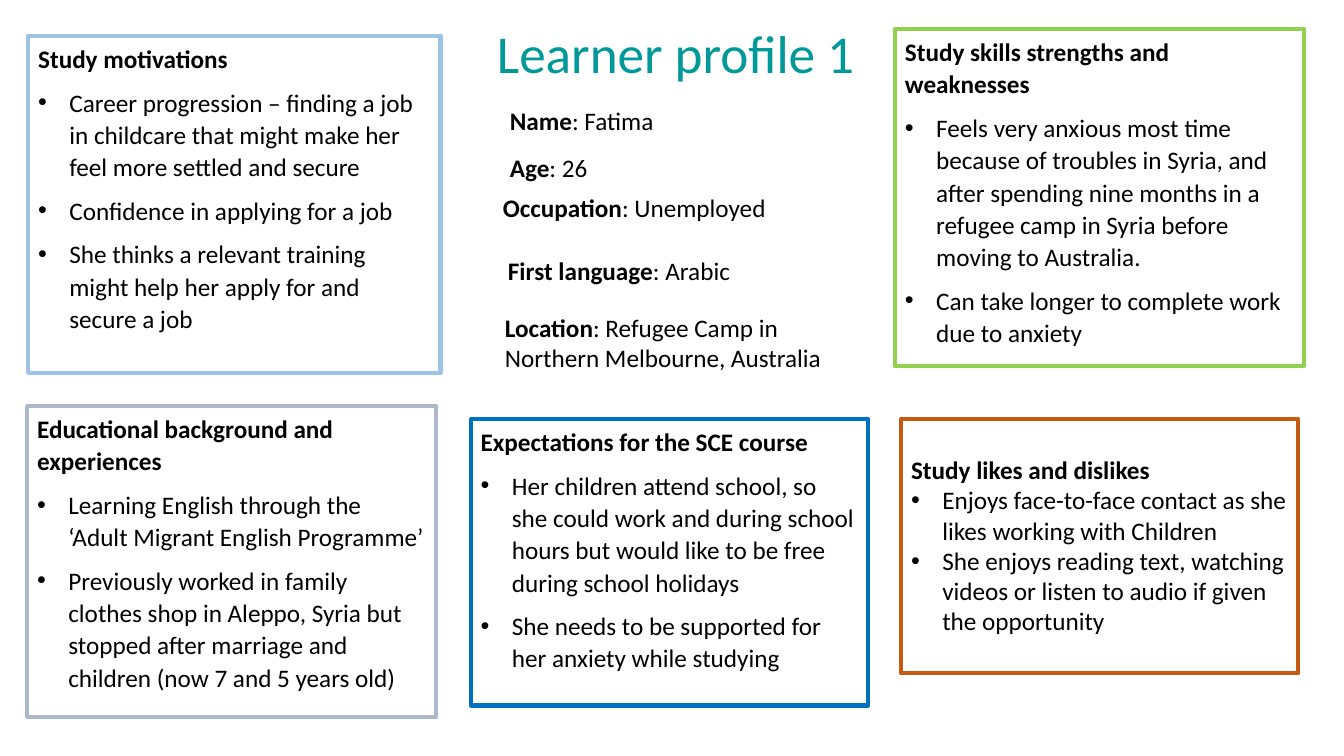
import pptx
import pptx.util
import pptx.dml.color
import pptx.enum.shapes
import pptx.enum.text
import pptx.oxml.ns
import lxml.etree

CELL = pptx.util.Inches(0.1)
COLUMNS, ROWS = 133.33, 75
INDENT = 3.1
BODY = {"size": pptx.util.Pt(18), "name": "Calibri", "bold": False}
HEADING = {**BODY, "bold": True}
TITLE = {**BODY, "size": pptx.util.Pt(38)}
LOOSE = {"line_spacing": 1.07, "space_after": pptx.util.Pt(8)}
TIGHT = {"line_spacing": 1.0, "space_after": pptx.util.Pt(0)}

PANELS = [
    ((46.7, 41.6, 39.4, 28.4), "0070C0", "Expectations for the SCE course", [
        "Her children attend school, so she could work and during school hours "
        "but would like to be free during school holidays",
        "She needs to be supported for her anxiety while studying",
    ], LOOSE, LOOSE),
    ((2.8, 3.6, 40.9, 33.4), "9DC3E6", "Study motivations", [
        "Career progression – finding a job in childcare that might make her "
        "feel more settled and secure",
        "Confidence in applying for a job",
        "She thinks a relevant training might help her apply for and secure a job",
    ], LOOSE, LOOSE),
    ((88.8, 2.9, 40.6, 33.4), "92D050", "Study skills strengths and weaknesses", [
        "Feels very anxious most time because of troubles in Syria, and after "
        "spending nine months in a refugee camp in Syria before moving to Australia.",
        "Can take longer to complete work due to anxiety",
    ], LOOSE, LOOSE),
    ((2.7, 40.3, 40.6, 30.8), "ADB9CA", "Educational background and experiences", [
        "Learning English through the ‘Adult Migrant English Programme’",
        "Previously worked in family clothes shop in Aleppo, Syria but stopped "
        "after marriage and children (now 7 and 5 years old)",
    ], LOOSE, LOOSE),
    ((89.4, 41.6, 39.4, 25.2), "C55A11", "Study likes and dislikes", [
        "Enjoys face-to-face contact as she likes working with Children",
        "She enjoys reading text, watching videos or listen to audio if given "
        "the opportunity",
    ], {**TIGHT, "line_spacing": 2.0}, TIGHT),
]

DETAILS = [
    ((49.6, 10, 37.6, 4), "Name", "Fatima"),
    ((49.6, 14.6, 31.7, 4), "Age", "26"),
    ((48.9, 18.6, 34.5, 4), "Occupation", "Unemployed"),
    ((49.4, 24.8, 34.5, 4), "First language", "Arabic"),
    ((49.1, 30.5, 34.5, 7.1), "Location",
     "Refugee Camp in Northern Melbourne, Australia"),
]


def cells(*counts):
    return [int(count * CELL) for count in counts]


def paint(colour_format, colour):
    colour_format.rgb = pptx.dml.color.RGBColor.from_string(colour)


def apply(target, values):
    for attribute, value in values.items():
        setattr(target, attribute, value)


def add_run(paragraph, wording, font, colour="000000"):
    run = paragraph.add_run()
    run.text = wording
    apply(run.font, font)
    paint(run.font.color, colour)


def add_bullet(paragraph):
    properties = paragraph._p.get_or_add_pPr()
    indent = cells(INDENT)[0]
    properties.set("marL", str(indent))
    properties.set("indent", str(-indent))
    for tag, attribute, value in (("a:buFont", "typeface", "Arial"),
                                  ("a:buChar", "char", "•")):
        mark = lxml.etree.SubElement(properties, pptx.oxml.ns.qn(tag))
        mark.set(attribute, value)


def add_title(slide, wording):
    title = slide.shapes.title
    left, top, width, height = cells(48.3, 2.2, 37.9, 6.8)
    apply(title, {"left": left, "top": top, "width": width, "height": height})
    apply(title.text_frame, {
        "word_wrap": False,
        "auto_size": pptx.enum.text.MSO_AUTO_SIZE.SHAPE_TO_FIT_TEXT,
        "vertical_anchor": pptx.enum.text.MSO_ANCHOR.TOP,
    })
    paragraph = title.text_frame.paragraphs[0]
    apply(paragraph, {
        "alignment": pptx.enum.text.PP_ALIGN.LEFT,
        "line_spacing": 0.9,
        "space_before": pptx.util.Pt(10),
    })
    add_run(paragraph, wording, TITLE, "009999")


def add_panel(slide, area, outline, heading, points, heading_spacing, point_spacing):
    panel = slide.shapes.add_shape(
        pptx.enum.shapes.MSO_SHAPE.RECTANGLE, *cells(*area))
    panel.shadow.inherit = False
    panel.fill.solid()
    paint(panel.fill.fore_color, "FFFFFF")
    paint(panel.line.color, outline)
    panel.line.width = pptx.util.Pt(3)
    frame = panel.text_frame
    apply(frame, {"word_wrap": True,
                  "vertical_anchor": pptx.enum.text.MSO_ANCHOR.TOP})
    left = {"alignment": pptx.enum.text.PP_ALIGN.LEFT}
    apply(frame.paragraphs[0], {**left, **heading_spacing})
    add_run(frame.paragraphs[0], heading, HEADING)
    for point in points:
        paragraph = frame.add_paragraph()
        apply(paragraph, {**left, **point_spacing})
        add_bullet(paragraph)
        add_run(paragraph, point, BODY)


def add_detail(slide, area, label, value):
    frame = slide.shapes.add_textbox(*cells(*area)).text_frame
    apply(frame, {"word_wrap": True,
                  "auto_size": pptx.enum.text.MSO_AUTO_SIZE.SHAPE_TO_FIT_TEXT})
    add_run(frame.paragraphs[0], label, HEADING)
    add_run(frame.paragraphs[0], f": {value}", BODY)


def main():
    profile = pptx.Presentation()
    profile.slide_width, profile.slide_height = cells(COLUMNS, ROWS)
    slide = profile.slides.add_slide(profile.slide_layouts.get_by_name("Title Only"))
    add_title(slide, "Learner profile 1")
    for panel in PANELS:
        add_panel(slide, *panel)
    for detail in DETAILS:
        add_detail(slide, *detail)
    profile.save("out.pptx")


if __name__ == "__main__":
    main()
